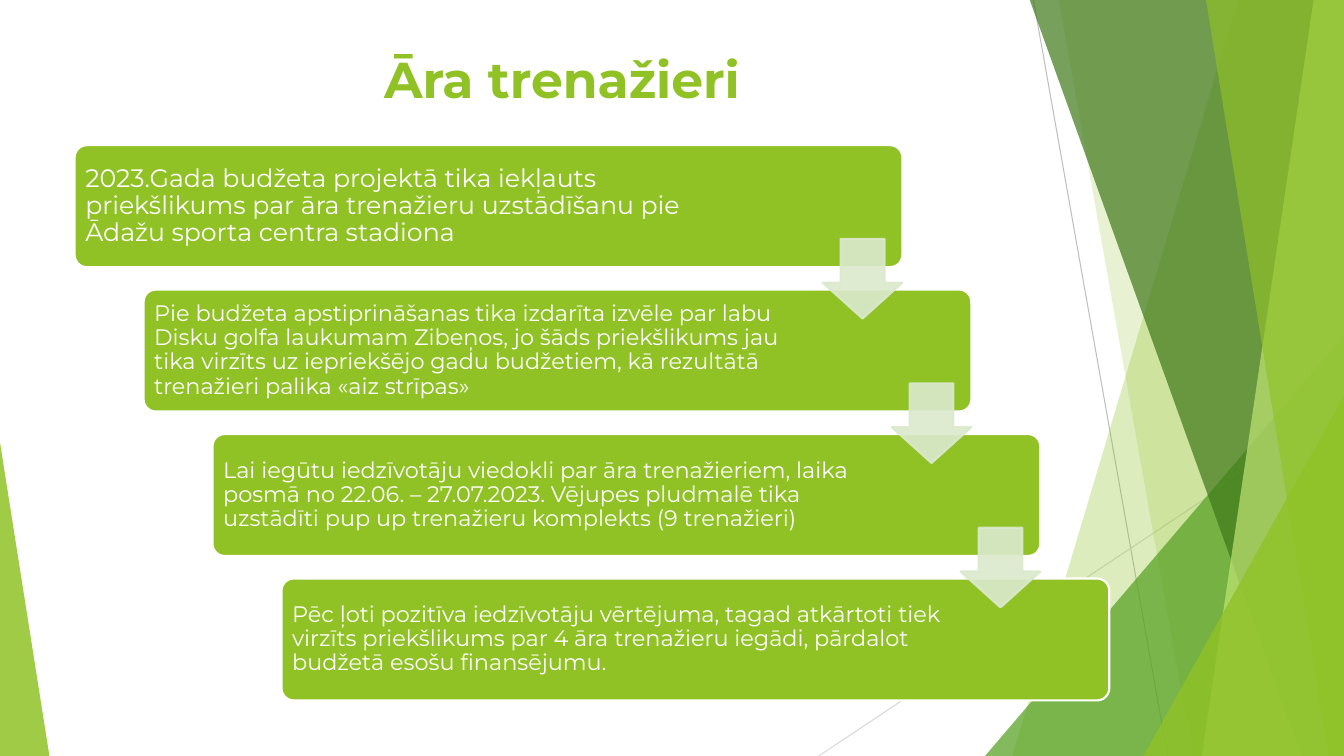
from lxml.etree import SubElement
from pptx import Presentation
from pptx.dml.color import RGBColor
from pptx.enum.shapes import MSO_CONNECTOR, MSO_SHAPE as SHAPE
from pptx.enum.text import MSO_ANCHOR as ANCHOR, PP_ALIGN as ALIGN
from pptx.oxml.ns import qn
from pptx.util import Inches, Pt

COLORS = {
    "green": "90C226", "leaf": "54A021", "forest": "3F7819", "lime": "C0E474",
    "pale": "DBE9CD", "white": "FFFFFF", "gray": "BFBFBF", "light_gray": "D9D9D9",
}
FONT = "Montserrat"


def paint(fill, color, opacity=100):
    fill.solid()
    fill.fore_color.rgb = RGBColor.from_string(COLORS[color])
    if opacity < 100:
        color_xml = next(fill._xPr.iter(qn("a:srgbClr")))
        SubElement(color_xml, qn("a:alpha")).set("val", str(opacity * 1000))


def style_text(paragraph, size, color, bold=False):
    paragraph.alignment = ALIGN.LEFT
    font = paragraph.runs[0].font
    font.name, font.size, font.bold = FONT, Pt(size), bold
    font.color.rgb = RGBColor.from_string(COLORS[color])


prs = Presentation()
prs.slide_width, prs.slide_height = Inches(13.33), Inches(7.5)
slide = prs.slides.add_slide(prs.slide_layouts[5])
shapes = slide.shapes

# Thin lines behind the green bands
for x1, y1, x2, y2, color in [
    (10.25, 0, 11.58, 7.5, "gray"),
    (13.33, 4.03, 8.12, 7.5, "light_gray"),
]:
    ray = shapes.add_connector(
        MSO_CONNECTOR.STRAIGHT, Inches(x1), Inches(y1), Inches(x2), Inches(y2))
    ray.line.width = Pt(0.75)
    ray.line.color.rgb = RGBColor.from_string(COLORS[color])
    SubElement(ray._element.spPr, qn("a:effectLst"))

# Green facets, back to front: bands by top and bottom x, triangles by box and apex
for kind, geometry, color, opacity in [
    ("band", (12.28, 10.04), "green", 30),
    ("band", (10.5, 11.83), "green", 20),
    ("triangle", (9.77, 3.33, 3.56, 4.17, 1), "leaf", 72),
    ("band", (10.21, 12.91), "forest", 70),
    ("band", (13.03, 11.92), "lime", 70),
    ("band", (11.96, 13.18), "green", 65),
    ("triangle", (11.34, 3.93, 1.99, 3.57, 1), "green", 80),
    ("triangle", (0, 4.39, 0.49, 3.11, 0), "green", 85),
]:
    if kind == "band":
        top_x, bottom_x = geometry
        outline = shapes.build_freeform(Inches(top_x), Inches(-0.01))
        outline.add_line_segments([
            (Inches(x), Inches(y))
            for x, y in [(13.33, -0.01), (13.33, 7.5), (bottom_x, 7.5)]])
        facet = outline.convert_to_shape()
    else:
        *box, apex = geometry
        facet = shapes.add_shape(SHAPE.ISOSCELES_TRIANGLE, *map(Inches, box))
        facet.adjustments[0] = apex
    paint(facet.fill, color, opacity)
    facet.line.fill.background()
    facet.shadow.inherit = False

# Title
title = shapes.title
title.left, title.top = Inches(3.71), Inches(0.37)
title.width, title.height = Inches(3.99), Inches(0.81)
title.text_frame.text = "Āra trenažieri"
title.text_frame.vertical_anchor = ANCHOR.MIDDLE
style_text(title.text_frame.paragraphs[0], 36, "green", bold=True)

# Staircase of steps
steps = [
    ("2023.Gada budžeta projektā tika iekļauts priekšlikums par āra trenažieru "
     "uzstādīšanu pie Ādažu sporta centra stadiona", 18),
    ("Pie budžeta apstiprināšanas tika izdarīta izvēle par labu Disku golfa "
     "laukumam Zibeņos, jo šāds priekšlikums jau tika virzīts uz iepriekšējo gadu "
     "budžetiem, kā rezultātā trenažieri palika «aiz strīpas»", 16),
    ("Lai iegūtu iedzīvotāju viedokli par āra trenažieriem, laika posmā no "
     "22.06. – 27.07.2023. Vējupes pludmalē tika uzstādīti pup up trenažieru "
     "komplekts (9 trenažieri)", 16),
    ("Pēc ļoti pozitīva iedzīvotāju vērtējuma, tagad atkārtoti tiek virzīts "
     "priekšlikums par 4 āra trenažieru iegādi, pārdalot budžetā esošu "
     "finansējumu.", 16),
]
LEFT, TOP, STEP_X, STEP_Y = 0.74, 1.44, 0.684, 1.433
for i, (wording, size) in enumerate(steps):
    step = shapes.add_shape(
        SHAPE.ROUNDED_RECTANGLE, Inches(LEFT + i * STEP_X),
        Inches(TOP + i * STEP_Y), Inches(8.21), Inches(1.21))
    step.adjustments[0] = 0.1
    step.shadow.inherit = False
    paint(step.fill, "green")
    paint(step.line.fill, "white")
    step.line.width = Pt(1.5)
    frame = step.text_frame
    frame.word_wrap = True
    frame.vertical_anchor = ANCHOR.MIDDLE
    frame.margin_left = frame.margin_top = frame.margin_bottom = Inches(0.07)
    frame.margin_right = Inches(1.55)  # room for the arrow
    frame.text = wording
    frame.paragraphs[0].line_spacing = 0.9
    style_text(frame.paragraphs[0], size, "white")

# Arrows from each step to the next
for i in range(len(steps) - 1):
    arrow = shapes.add_shape(
        SHAPE.DOWN_ARROW, Inches(LEFT + 7.42 + i * STEP_X),
        Inches(TOP + 0.93 + i * STEP_Y), Inches(0.79), Inches(0.79))
    arrow.adjustments[0], arrow.adjustments[1] = 0.55, 0.45
    arrow.shadow.inherit = False
    paint(arrow.fill, "pale", 90)
    paint(arrow.line.fill, "pale", 90)
    arrow.line.width = Pt(1.5)

prs.save("out.pptx")
